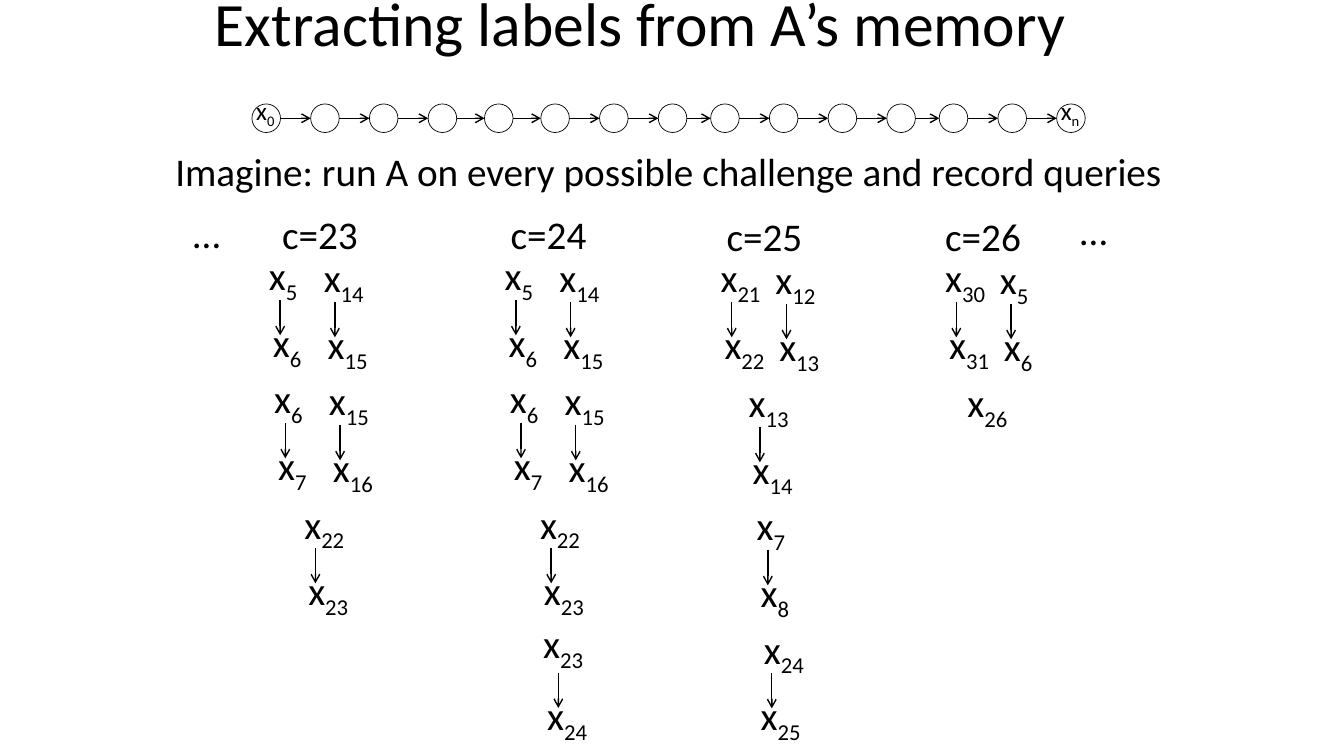
import dataclasses
import itertools
import typing

import lxml.etree
import pptx
import pptx.dml.color
import pptx.enum.shapes
import pptx.enum.text
import pptx.oxml.ns
import pptx.util

Cm = pptx.util.Cm
Pt = pptx.util.Pt
qn = pptx.oxml.ns.qn
BLACK = pptx.dml.color.RGBColor(0, 0, 0)
OVAL = pptx.enum.shapes.MSO_SHAPE.OVAL
LINE = pptx.enum.shapes.MSO_CONNECTOR.STRAIGHT
MIDDLE = pptx.enum.text.MSO_ANCHOR.MIDDLE
ALIGN = pptx.enum.text.PP_ALIGN

TITLE = {"name": "Calibri", "size": Pt(44)}
BODY = {"name": "Calibri", "size": Pt(28)}
SMALL = {"name": "Calibri", "size": Pt(18)}


@dataclasses.dataclass(frozen=True)
class Step:
    """One query: upper label and, if any, the lower one its arrow meets."""
    x: float
    y: float
    top: str
    low: str = ""
    shift: float = 0.1
    fall: float = 1.68
    tip: float = 0.43


@dataclasses.dataclass(frozen=True)
class Column:
    x: float
    y: float
    head: str
    inset: float
    steps: tuple[Step, ...]


# Queries, placed relative to their column
SHARED = (
    Step(0, 0, "5", "6"), Step(1.38, 0.05, "14", "15"),
    Step(0.13, 3.1, "6", "7"), Step(1.51, 3.15, "15", "16"),
    Step(0.89, 6.25, "22", "23"),
)
COLUMNS = (
    Column(6.53, 6.22, "c=23", 0.33, SHARED),
    Column(12.47, 6.22, "c=24", 0.15, SHARED + (
        Step(0.97, 9.27, "23", "24", fall=1.8, tip=0.53),)),
    Column(17.91, 6.27, "c=25", 0.15, (
        Step(0, 0, "21", "22"), Step(1.38, 0.05, "12", "13"),
        Step(0.71, 3.15, "13", "14"), Step(0.91, 6.25, "7", "8"),
        Step(1.09, 9.35, "24", "25", shift=-0.08, tip=0.53))),
    Column(23.57, 6.27, "c=26", 0, (
        Step(0, 0, "30", "31"), Step(1.38, 0.05, "5", "6"),
        Step(0.56, 3.15, "26"))),
)

# Chain of nodes
SIZE = 0.72
TOP = 2.62
WIDE, MID, TIGHT = 1.48, 1.42, 1.32
GAPS = [WIDE] * 3 + [MID] * 2 + [WIDE] * 2 + [TIGHT] + [WIDE] * 3 + [TIGHT] + [WIDE] * 2


def write(par: typing.Any, text: str, style: dict, sub: str = "") -> None:
    for part in filter(None, (text, sub)):
        run = par.add_run()
        run.text = part
        for key, value in style.items():
            setattr(run.font, key, value)
        run.font.color.rgb = BLACK
    if sub:
        run._r.get_or_add_rPr().set("baseline", "-25000")


def label(slide: typing.Any, x: float, y: float, wide: float, text: str, sub: str = "") -> None:
    box = slide.shapes.add_textbox(Cm(x), Cm(y), Cm(wide), Cm(1.83))
    box.text_frame.word_wrap = True
    write(box.text_frame.paragraphs[0], text, BODY, sub)


def arrow(slide: typing.Any, x: float, y: float, to_x: float, to_y: float) -> None:
    link = slide.shapes.add_connector(LINE, Cm(x), Cm(y), Cm(to_x), Cm(to_y))
    link.line.color.rgb = BLACK
    link.line.width = Pt(1)
    lxml.etree.SubElement(link.line._get_or_add_ln(), qn("a:tailEnd"), type="arrow")
    lxml.etree.SubElement(link._element.spPr, qn("a:effectLst"))


def oval(slide: typing.Any, x: float, y: float) -> typing.Any:
    node = slide.shapes.add_shape(OVAL, Cm(x), Cm(y), Cm(SIZE), Cm(SIZE))
    node.shadow.inherit = False
    node.fill.background()
    return node


def chain(slide: typing.Any) -> None:
    spots = list(itertools.accumulate(GAPS, initial=6.35))
    for x in spots:
        node = oval(slide, x, TOP)
        node.line.color.rgb = BLACK
        node.line.width = Pt(0.5)
    for left, right in itertools.pairwise(spots):
        arrow(slide, left + SIZE, TOP + SIZE / 2, right, TOP + SIZE / 2)
    form = {
        "margin_left": Cm(0.25), "margin_right": Cm(0.25),
        "margin_top": Cm(0), "margin_bottom": Cm(0.13),
        "vertical_anchor": MIDDLE, "word_wrap": False,
    }
    for x, sub in ((spots[0], "0"), (spots[-1], "n")):
        name = oval(slide, x - 0.02, TOP - 0.08)
        name.line.fill.background()
        for key, value in form.items():
            setattr(name.text_frame, key, value)
        par = name.text_frame.paragraphs[0]
        par.alignment = ALIGN.CENTER
        write(par, "x", SMALL, sub)


def query(slide: typing.Any, col: Column, step: Step) -> None:
    x, y = col.x + step.x, col.y + step.y
    label(slide, x, y, 1.9, "x", step.top)
    if step.low:
        x, y = x + step.shift, y + step.fall
        label(slide, x, y, 1.9, "x", step.low)
        arrow(slide, x + step.tip, y - 0.34, x + step.tip, y + 0.55)


def main() -> None:
    deck = pptx.Presentation()
    deck.slide_width, deck.slide_height = Cm(33.87), Cm(19.05)
    slide = deck.slides.add_slide(deck.slide_layouts[5])

    # Title
    title = slide.shapes.title
    place = {"left": Cm(5.16), "top": Cm(-0.91), "width": Cm(24.13), "height": Cm(3.18)}
    for key, value in place.items():
        setattr(title, key, value)
    title.text_frame.vertical_anchor = MIDDLE
    title.text_frame.auto_size = pptx.enum.text.MSO_AUTO_SIZE.NONE
    par = title.text_frame.paragraphs[0]
    par.alignment = ALIGN.LEFT
    par.line_spacing = 0.9
    write(par, "Extracting labels from A’s memory", TITLE)

    # Chain and lead sentence
    chain(slide)
    label(slide, 4.17, 3.58, 25.76, "Imagine: run A on every possible challenge and record queries")

    # Challenges with their queries
    for col in COLUMNS:
        label(slide, col.x + col.inset, col.y - 1.04, 2.67, col.head)
        for step in col.steps:
            query(slide, col, step)
    for x, y in ((4.62, 5.16), (26.97, 5.08)):
        label(slide, x, y, 2.67, "…")

    deck.save("out.pptx")


if __name__ == "__main__":
    main()
